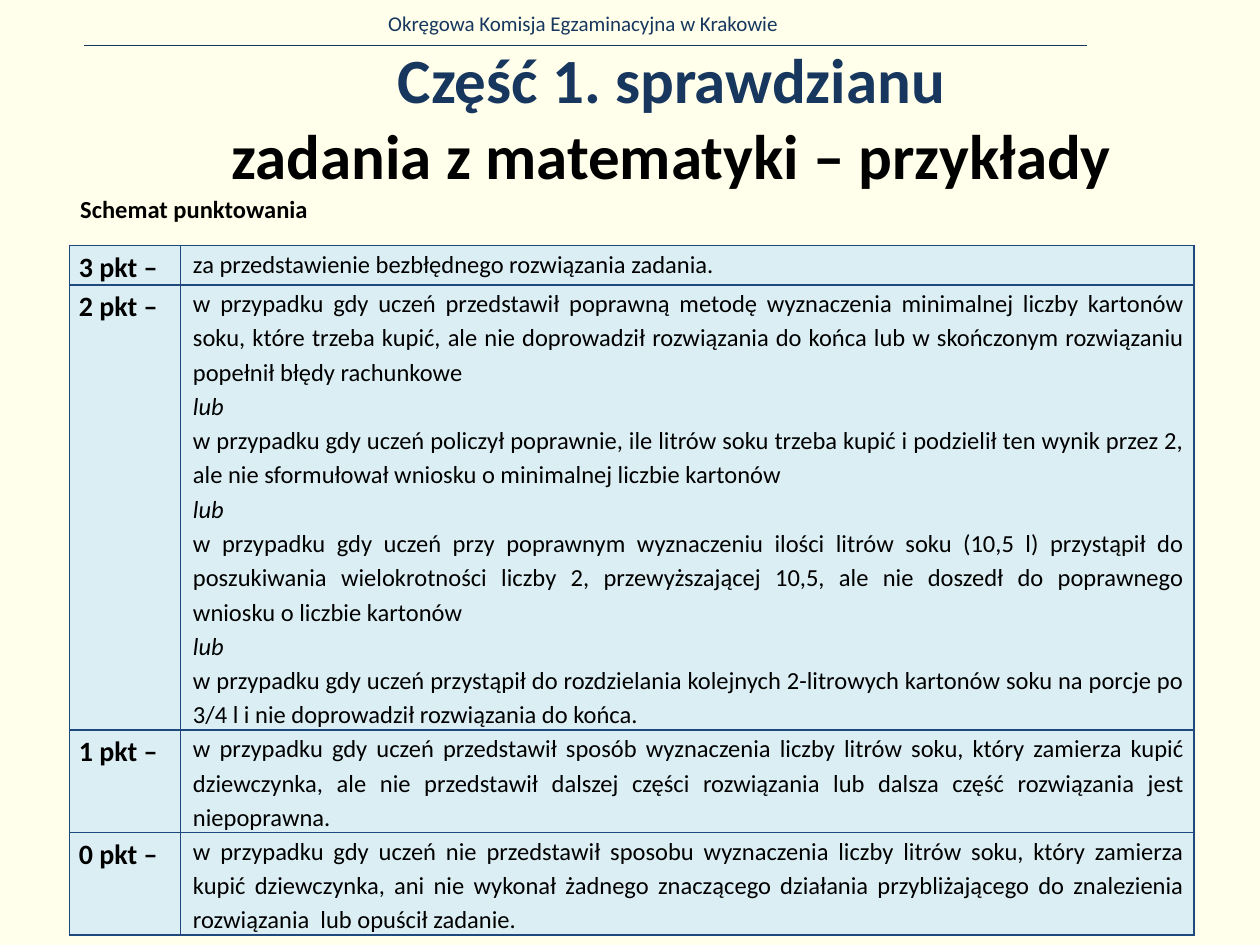
from dataclasses import dataclass

import pptx
import pptx.dml.color
import pptx.enum.shapes
import pptx.enum.text
import pptx.oxml.ns
import pptx.util
from lxml import etree

Pt = pptx.util.Pt
Align = pptx.enum.text.PP_ALIGN
Anchor = pptx.enum.text.MSO_ANCHOR
qn = pptx.oxml.ns.qn


def color(value):
    return pptx.dml.color.RGBColor.from_string(value)


@dataclass(frozen=True)
class Theme:
    font: str = "Calibri"
    paper: str = "FFFFEB"
    navy: str = "17375E"
    ink: str = "000000"
    cell: str = "DBEEF4"
    border: str = "1F497D"
    header_size: int = 12
    title_size: int = 36
    body_size: int = 14
    score_size: int = 16


THEME = Theme()
OR = "lub"
SCORING = [
    ("3 pkt –", 22.5, ["za przedstawienie bezbłędnego rozwiązania zadania."]),
    ("2 pkt –", 254.5, [
        "w przypadku gdy uczeń przedstawił poprawną metodę wyznaczenia minimalnej liczby kartonów "
        "soku, które trzeba kupić, ale nie doprowadził rozwiązania do końca lub w skończonym "
        "rozwiązaniu popełnił błędy rachunkowe",
        OR,
        "w przypadku gdy uczeń policzył poprawnie, ile litrów soku trzeba kupić i podzielił ten "
        "wynik przez 2, ale nie sformułował wniosku o minimalnej liczbie kartonów",
        OR,
        "w przypadku gdy uczeń przy poprawnym wyznaczeniu ilości litrów soku (10,5 l) przystąpił do "
        "poszukiwania wielokrotności liczby 2, przewyższającej 10,5, ale nie doszedł do poprawnego "
        "wniosku o liczbie kartonów",
        OR,
        "w przypadku gdy uczeń przystąpił do rozdzielania kolejnych 2-litrowych kartonów soku na "
        "porcje po 3/4 l i nie doprowadził rozwiązania do końca.",
    ]),
    ("1 pkt –", 58.5, [
        "w przypadku gdy uczeń przedstawił sposób wyznaczenia liczby litrów soku, który zamierza "
        "kupić dziewczynka, ale nie przedstawił dalszej części rozwiązania lub dalsza część "
        "rozwiązania jest niepoprawna.",
    ]),
    ("0 pkt –", 58.5, [
        "w przypadku gdy uczeń nie przedstawił sposobu wyznaczenia liczby litrów soku, który "
        "zamierza kupić dziewczynka, ani nie wykonał żadnego znaczącego działania przybliżającego "
        "do znalezienia rozwiązania  lub opuścił zadanie.",
    ]),
]


def add_span(para, text, size, ink=THEME.ink, bold=False, italic=False):
    span = para.add_run()
    span.text = text
    span.font.name = THEME.font
    span.font.size = Pt(size)
    span.font.bold = bold
    span.font.italic = italic
    span.font.color.rgb = color(ink)


def add_label(page, left, top, width, height, text, size, ink, bold=False, align=Align.LEFT, wrap=True):
    box = page.shapes.add_textbox(Pt(left), Pt(top), Pt(width), Pt(height))
    box.text_frame.word_wrap = wrap
    para = box.text_frame.paragraphs[0]
    para.alignment = align
    add_span(para, text, size, ink, bold)


def add_rule(page, left, right, top):
    rule = page.shapes.add_connector(
        pptx.enum.shapes.MSO_CONNECTOR.STRAIGHT, Pt(left), Pt(top), Pt(right), Pt(top))
    rule.line.color.rgb = color(THEME.navy)
    rule.line.width = Pt(0.5)
    etree.SubElement(rule.element.spPr, qn("a:effectLst"))


def format_title(page):
    title = page.shapes.title
    title.left, title.top, title.width, title.height = Pt(88.5), Pt(21.5), Pt(590.5), Pt(90)
    frame = title.text_frame
    frame.auto_size = pptx.enum.text.MSO_AUTO_SIZE.NONE
    frame.vertical_anchor = Anchor.MIDDLE
    para = frame.paragraphs[0]
    para.alignment = Align.CENTER
    add_span(para, "Część 1. sprawdzianu", THEME.title_size, THEME.navy, True)
    para.add_line_break()
    add_span(para, "zadania z matematyki – przykłady", THEME.title_size, bold=True)


def add_borders(cell):
    properties = cell._tc.get_or_add_tcPr()
    for index, side in enumerate(("lnL", "lnR", "lnT", "lnB")):
        line = etree.Element(qn(f"a:{side}"), w=str(Pt(1)))
        fill = etree.SubElement(line, qn("a:solidFill"))
        etree.SubElement(fill, qn("a:srgbClr"), val=THEME.border)
        properties.insert(index, line)


def fill_cell(cell, texts, size, margins, indent=0, bold=False):
    cell.fill.solid()
    cell.fill.fore_color.rgb = color(THEME.cell)
    add_borders(cell)
    cell.margin_left, cell.margin_right = map(Pt, margins)
    cell.margin_top = cell.margin_bottom = Pt(0)
    cell.vertical_anchor = Anchor.TOP
    for index, text in enumerate(texts):
        para = cell.text_frame.add_paragraph() if index else cell.text_frame.paragraphs[0]
        para.alignment = Align.JUSTIFY
        para.line_spacing = 1.15
        if indent:
            properties = para._p.get_or_add_pPr()
            properties.set("marL", str(Pt(indent)))
            properties.set("indent", "0")
        add_span(para, text, size, bold=bold, italic=text == OR)


def add_scoring_table(page):
    widths = (63.5, 579)
    height = sum(row[1] for row in SCORING)
    table = page.shapes.add_table(
        len(SCORING), len(widths), Pt(39.75), Pt(140.25), Pt(sum(widths)), Pt(height)).table
    table.first_row = False
    table.horz_banding = False
    for column, width in zip(table.columns, widths):
        column.width = Pt(width)
    for row, (score, row_height, texts) in zip(table.rows, SCORING):
        row.height = Pt(row_height)
        fill_cell(row.cells[0], [score], THEME.score_size, (5.4, 1.4), bold=True)
        fill_cell(row.cells[1], texts, THEME.body_size, (1.4, 5.4), indent=5.65)


def main():
    deck = pptx.Presentation()
    deck.slide_width, deck.slide_height = Pt(720), Pt(540)
    page = deck.slides.add_slide(deck.slide_layouts[5])
    page.background.fill.solid()
    page.background.fill.fore_color.rgb = color(THEME.paper)
    add_label(page, 18.5, 2.25, 629.5, 21.75, "Okręgowa Komisja Egzaminacyjna w Krakowie",
              THEME.header_size, THEME.navy, align=Align.CENTER)
    add_rule(page, 48, 621, 26)
    format_title(page)
    add_scoring_table(page)
    add_label(page, 38.75, 107.5, 145.5, 24.25, "Schemat punktowania",
              THEME.body_size, THEME.ink, bold=True, wrap=False)
    deck.save("out.pptx")


if __name__ == "__main__":
    main()
